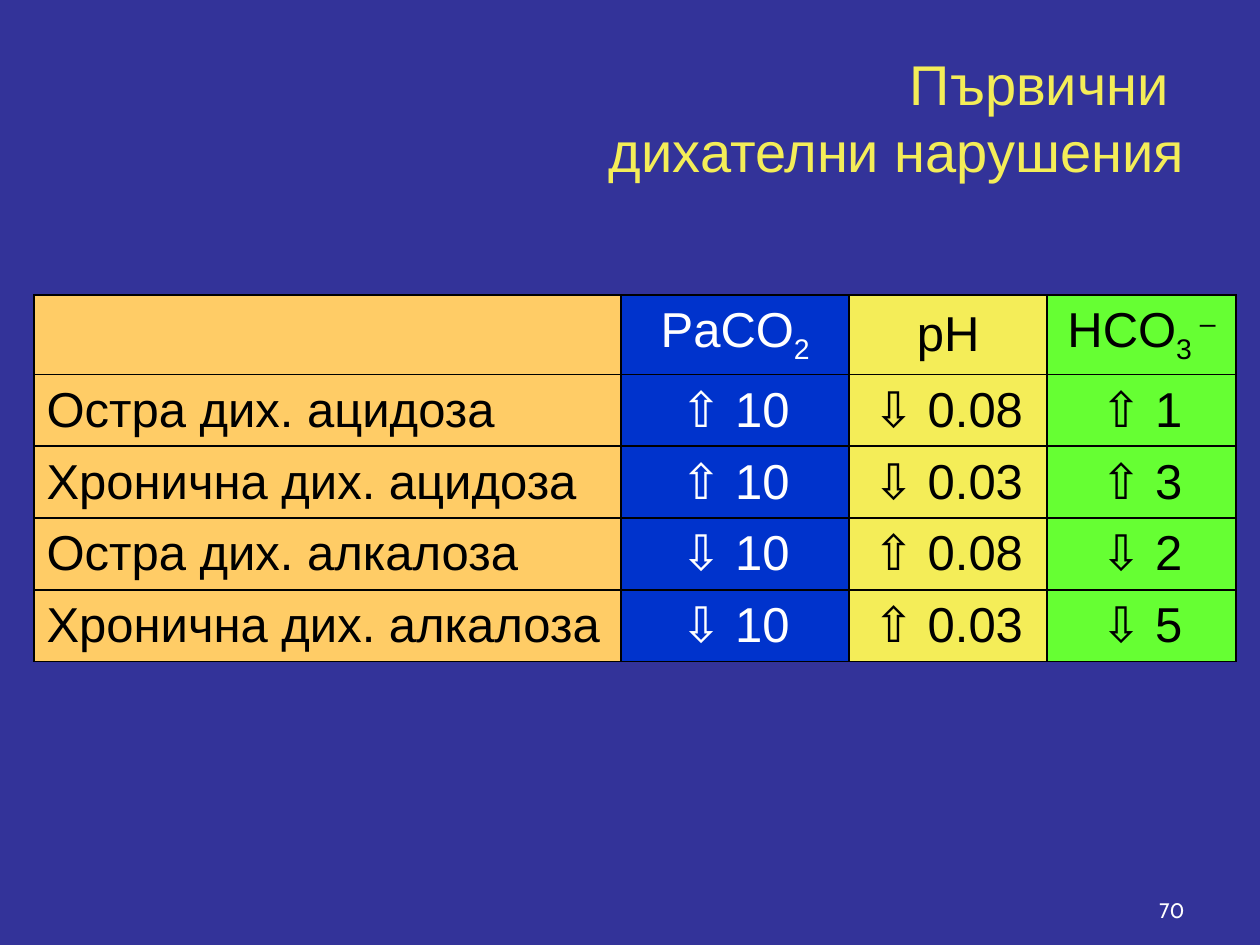
from dataclasses import dataclass

from lxml import etree
from pptx import Presentation
from pptx.dml.color import RGBColor
from pptx.enum.text import MSO_ANCHOR, PP_ALIGN
from pptx.oxml.ns import qn
from pptx.util import Inches, Pt

LEFT, CENTER, RIGHT = PP_ALIGN.LEFT, PP_ALIGN.CENTER, PP_ALIGN.RIGHT
MIDDLE, BOTTOM = MSO_ANCHOR.MIDDLE, MSO_ANCHOR.BOTTOM
BLANK_LAYOUT = 6


@dataclass(frozen=True)
class Theme:
    background: str = "333399"
    title: str = "F4ED58"
    light: str = "FFFFFF"
    dark: str = "000000"
    body_font: str = "Arial"
    number_font: str = "Cabin"
    title_size: int = 32
    table_size: int = 28
    number_size: int = 12
    border_width: int = 1


THEME = Theme()

# Width in inches, fill, text colour and alignment of each column
COLUMNS = [
    (4.66, "FFCC66", THEME.dark, LEFT),
    (1.81, "0033CC", THEME.light, CENTER),
    (1.57, "F4ED58", THEME.dark, CENTER),
    (1.5, "66FF33", THEME.dark, CENTER),
]
HEADER_HEIGHT, ROW_HEIGHT = 0.6, 0.57
SUBSCRIPT, SUPERSCRIPT = -25, 30

# A cell is a string, or a list of (text, baseline shift in percent)
ROWS = [
    ["", [("PaCO", 0), ("2", SUBSCRIPT)], "pH",
     [("HCO", 0), ("3 ", SUBSCRIPT), ("–", SUPERSCRIPT)]],
    ["Остра дих. ацидоза", "⇧ 10", "⇩ 0.08", "⇧ 1"],
    ["Хронична дих. ацидоза", "⇧ 10", "⇩ 0.03", "⇧ 3"],
    ["Остра дих. алкалоза", "⇩ 10", "⇧ 0.08", "⇩ 2"],
    ["Хронична дих. алкалоза", "⇩ 10", "⇧ 0.03", "⇩ 5"],
]


def write(para, content, *, size, color, font=THEME.body_font, align=LEFT):
    """Fill a paragraph; a newline in the content becomes a line break."""
    para.alignment = align
    pieces = [(content, 0)] if isinstance(content, str) else content
    for text, shift in pieces:
        for index, line in enumerate(text.split("\n")):
            if index:
                para.add_line_break()
            span = para.add_run()
            span.text = line
            span.font.size = Pt(size)
            span.font.name = font
            span.font.color.rgb = RGBColor.from_string(color)
            if shift:
                span._r.get_or_add_rPr().set("baseline", str(shift * 1000))


def add_text(page, content, left, top, width, height, anchor, **text_format):
    box = page.shapes.add_textbox(*map(Inches, (left, top, width, height)))
    box.text_frame.word_wrap = True
    box.text_frame.vertical_anchor = anchor
    write(box.text_frame.paragraphs[0], content, **text_format)


def add_borders(cell):
    properties = cell._tc.get_or_add_tcPr()
    for position, side in enumerate(("lnL", "lnR", "lnT", "lnB")):
        line = etree.Element(qn(f"a:{side}"), w=str(Pt(THEME.border_width)))
        fill = etree.SubElement(line, qn("a:solidFill"))
        etree.SubElement(fill, qn("a:srgbClr"), val=THEME.dark)
        properties.insert(position, line)


def add_value_table(page, left, top):
    widths = [column[0] for column in COLUMNS]
    heights = [HEADER_HEIGHT] + [ROW_HEIGHT] * (len(ROWS) - 1)
    frame = page.shapes.add_table(
        len(ROWS), len(COLUMNS),
        *map(Inches, (left, top, sum(widths), sum(heights))))
    table = frame.table
    table.first_row = table.horz_banding = False
    for column, width in zip(table.columns, widths):
        column.width = Inches(width)
    for row, height, contents in zip(table.rows, heights, ROWS):
        row.height = Inches(height)
        for cell, content, column in zip(row.cells, contents, COLUMNS):
            _, fill, color, align = column
            cell.fill.solid()
            cell.fill.fore_color.rgb = RGBColor.from_string(fill)
            cell.vertical_anchor = MIDDLE
            add_borders(cell)
            if content:
                write(cell.text_frame.paragraphs[0], content,
                      size=THEME.table_size, color=color, align=align)


def main():
    deck = Presentation()
    deck.slide_width, deck.slide_height = Inches(10), Inches(7.5)
    page = deck.slides.add_slide(deck.slide_layouts[BLANK_LAYOUT])
    page.background.fill.solid()
    page.background.fill.fore_color.rgb = RGBColor.from_string(THEME.background)

    add_text(page, "70", 7.17, 6.87, 2.33, 0.5, BOTTOM, align=RIGHT,
             size=THEME.number_size, color=THEME.light, font=THEME.number_font)
    add_text(page, "Първични \nдихателни нарушения", 0.5, 0.3, 9, 1.25, MIDDLE,
             align=RIGHT, size=THEME.title_size, color=THEME.title)
    add_value_table(page, 0.27, 2.34)
    deck.save("out.pptx")


if __name__ == "__main__":
    main()
